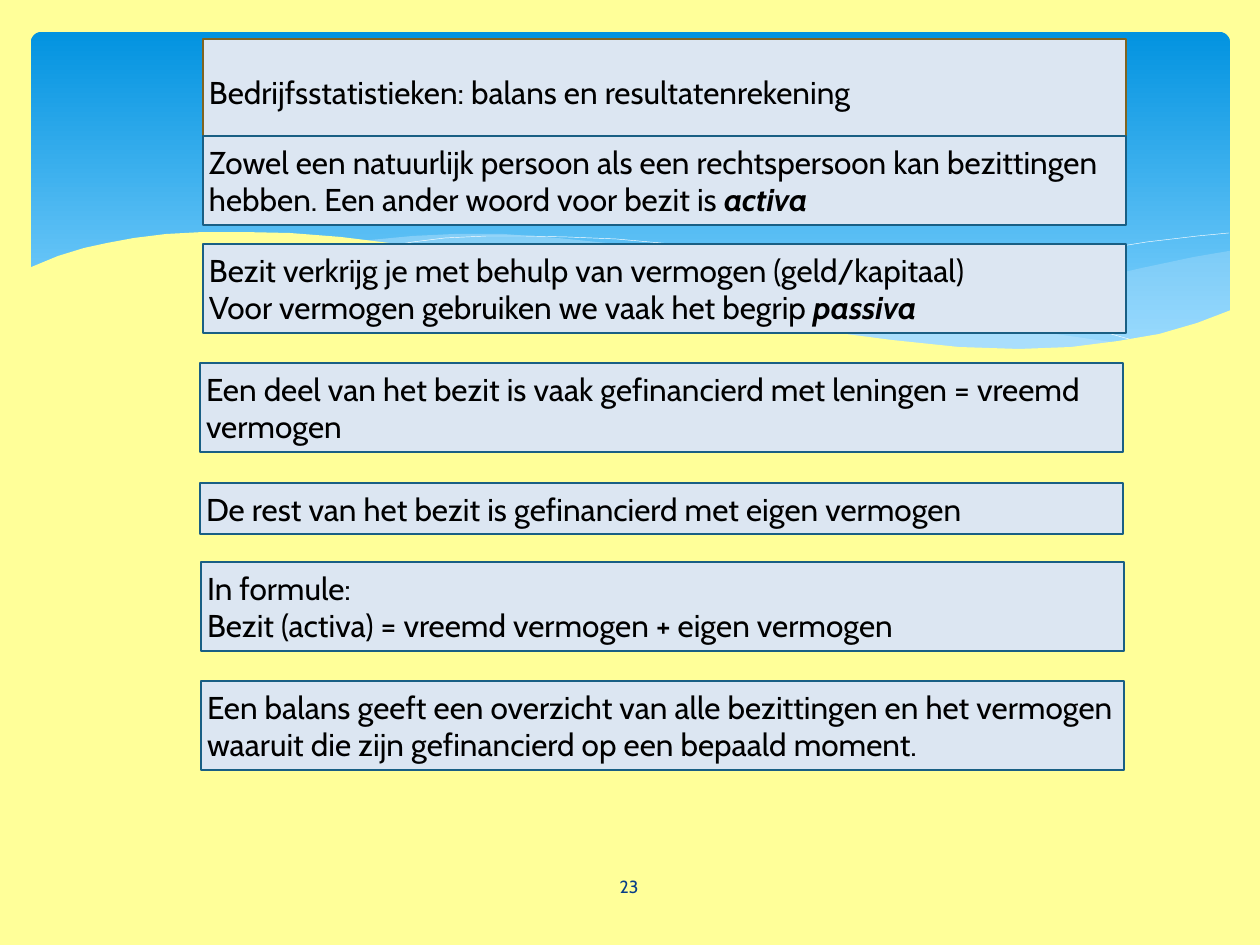
import pptx
import pptx.util
import pptx.dml.color
import pptx.enum.shapes
import pptx.enum.text
import pptx.oxml.ns
import lxml.etree

PX = 914400 / 126


def rgb(value):
    return pptx.dml.color.RGBColor.from_string(value)


def write(box, text, emphasis="", size=18, color="000000", align="LEFT", inset=6):
    frame = box.text_frame
    frame.word_wrap = True
    frame.vertical_anchor = pptx.enum.text.MSO_ANCHOR.MIDDLE
    frame.margin_left = frame.margin_right = round(inset * PX)
    frame.margin_top = frame.margin_bottom = round(inset * PX)
    lines = text.split("\n")
    for number, line in enumerate(lines):
        paragraph = frame.paragraphs[0] if number == 0 else frame.add_paragraph()
        paragraph.alignment = getattr(pptx.enum.text.PP_ALIGN, align)
        pieces = [(line, None)]
        if emphasis and number == len(lines) - 1:
            pieces.append((emphasis, True))
        for words, strong in pieces:
            run = paragraph.add_run()
            run.text = words
            run.font.name = "Cabin"
            run.font.size = pptx.util.Pt(size)
            run.font.color.rgb = rgb(color)
            run.font.bold = run.font.italic = strong


deck = pptx.Presentation()
deck.slide_width, deck.slide_height = round(1260 * PX), round(945 * PX)
slide = deck.slides.add_slide(deck.slide_layouts[5])
slide.background.fill.solid()
slide.background.fill.fore_color.rgb = rgb("FFFF99")

sky = slide.shapes.add_shape(
    pptx.enum.shapes.MSO_SHAPE.ROUNDED_RECTANGLE,
    *[round(length * PX) for length in (31, 32, 1199, 340)])
sky.adjustments[0] = 0.03
sky.shadow.inherit = False
sky.line.fill.background()
sky.fill.gradient()
sky.fill.gradient_angle = 270
for stop, position, color in zip(sky.fill.gradient_stops, (0, 0.9), ("0293E0", "83D3FE")):
    stop.position = position
    stop.color.rgb = rgb(color)

right_wave = [
    (1229, 251), (1194, 257), (1142, 268), (1085, 281), (1014, 299), (949, 312),
    (890, 324), (833, 334), (871, 339), (922, 345), (969, 349), (1026, 350),
    (1076, 348), (1120, 343), (1160, 334), (1196, 324), (1230, 311), (1230, 251)]
middle_wave = [
    (1125, 344), (1055, 334), (977, 320), (890, 302), (793, 280), (717, 262),
    (665, 252), (616, 244), (557, 238), (503, 234), (455, 234), (413, 236),
    (360, 241), (431, 251), (483, 261), (538, 272), (619, 292), (713, 312),
    (779, 325), (838, 335), (893, 343), (942, 348), (1003, 350), (1056, 350),
    (1092, 348)]
falling_crest = [
    (389, 246), (413, 242), (445, 238), (487, 236), (524, 236), (567, 237),
    (616, 239), (672, 244), (733, 252), (801, 262), (876, 276), (958, 294),
    (1047, 316), (1143, 343)]
rising_crest = [
    (772, 324), (822, 310), (876, 296), (942, 281), (1016, 265), (1091, 251),
    (1147, 242), (1198, 236), (1229, 233)]
shore = [
    (1231, 310), (1197, 323), (1159, 334), (1118, 341), (1071, 347), (1019, 349),
    (959, 347), (892, 340), (815, 330), (730, 315), (634, 294), (527, 268),
    (460, 255), (397, 244), (341, 237), (290, 233), (243, 232), (203, 232),
    (166, 234), (134, 238), (107, 243), (84, 248), (58, 256), (29, 268),
    (29, 415), (1231, 415)]

for outline, color, opacity in (
        (right_wave, "C6E7FC", 29), (middle_wave, "C6E7FC", 40),
        (falling_crest, None, 100), (rising_crest, None, 100), (shore, "FFFF99", 100)):
    builder = slide.shapes.build_freeform(*outline[0], scale=PX)
    builder.add_line_segments(outline[1:], close=color is not None)
    wave = builder.convert_to_shape()
    wave.shadow.inherit = False
    if color is None:
        wave.fill.background()
        wave.line.color.rgb = rgb("FFFFFF")
        wave.line.width = pptx.util.Pt(0.25)
        continue
    wave.line.fill.background()
    wave.fill.solid()
    wave.fill.fore_color.rgb = rgb(color)
    if opacity < 100:
        tint = wave.element.spPr.find(".//" + pptx.oxml.ns.qn("a:srgbClr"))
        lxml.etree.SubElement(tint, pptx.oxml.ns.qn("a:alpha"), val=str(opacity * 1000))

page_number = slide.shapes.add_textbox(
    *[round(length * PX) for length in (549, 862, 160, 50)])
write(page_number, "23", size=10, color="073E87", align="CENTER")

heading = slide.shapes.title
heading.element.getparent().append(heading.element)

statements = [
    (203, 66, 51, "Bedrijfsstatistieken: balans en resultatenrekening", ""),
    (203, 136, 89, "Zowel een natuurlijk persoon als een rechtspersoon kan bezittingen "
     "hebben. Een ander woord voor bezit is ", "activa"),
    (203, 244, 89, "Bezit verkrijg je met behulp van vermogen (geld/kapitaal)\n"
     "Voor vermogen gebruiken we vaak het begrip ", "passiva"),
    (200, 363, 89, "Een deel van het bezit is vaak gefinancierd met leningen = vreemd\n"
     "vermogen", ""),
    (200, 483, 51, "De rest van het bezit is gefinancierd met eigen vermogen", ""),
    (201, 562, 89, "In formule:\nBezit (activa) = vreemd vermogen + eigen vermogen", ""),
    (201, 681, 89, "Een balans geeft een overzicht van alle bezittingen en het vermogen "
     "waaruit die zijn gefinancierd op een bepaald moment.", "")]

for number, (left, top, height, text, emphasis) in enumerate(statements):
    place = [round(length * PX) for length in (left, top, 923, height)]
    if number == 0:
        panel = heading
        panel.left, panel.top, panel.width, panel.height = place
    else:
        panel = slide.shapes.add_shape(pptx.enum.shapes.MSO_SHAPE.RECTANGLE, *place)
        panel.shadow.inherit = False
    panel.fill.solid()
    panel.fill.fore_color.rgb = rgb("DCE6F2")
    panel.line.color.rgb = rgb("806421" if number == 0 else "195F84")
    panel.line.width = pptx.util.Pt(1.25)
    write(panel, text, emphasis)
    panel.text_frame.auto_size = pptx.enum.text.MSO_AUTO_SIZE.SHAPE_TO_FIT_TEXT

deck.save("out.pptx")
